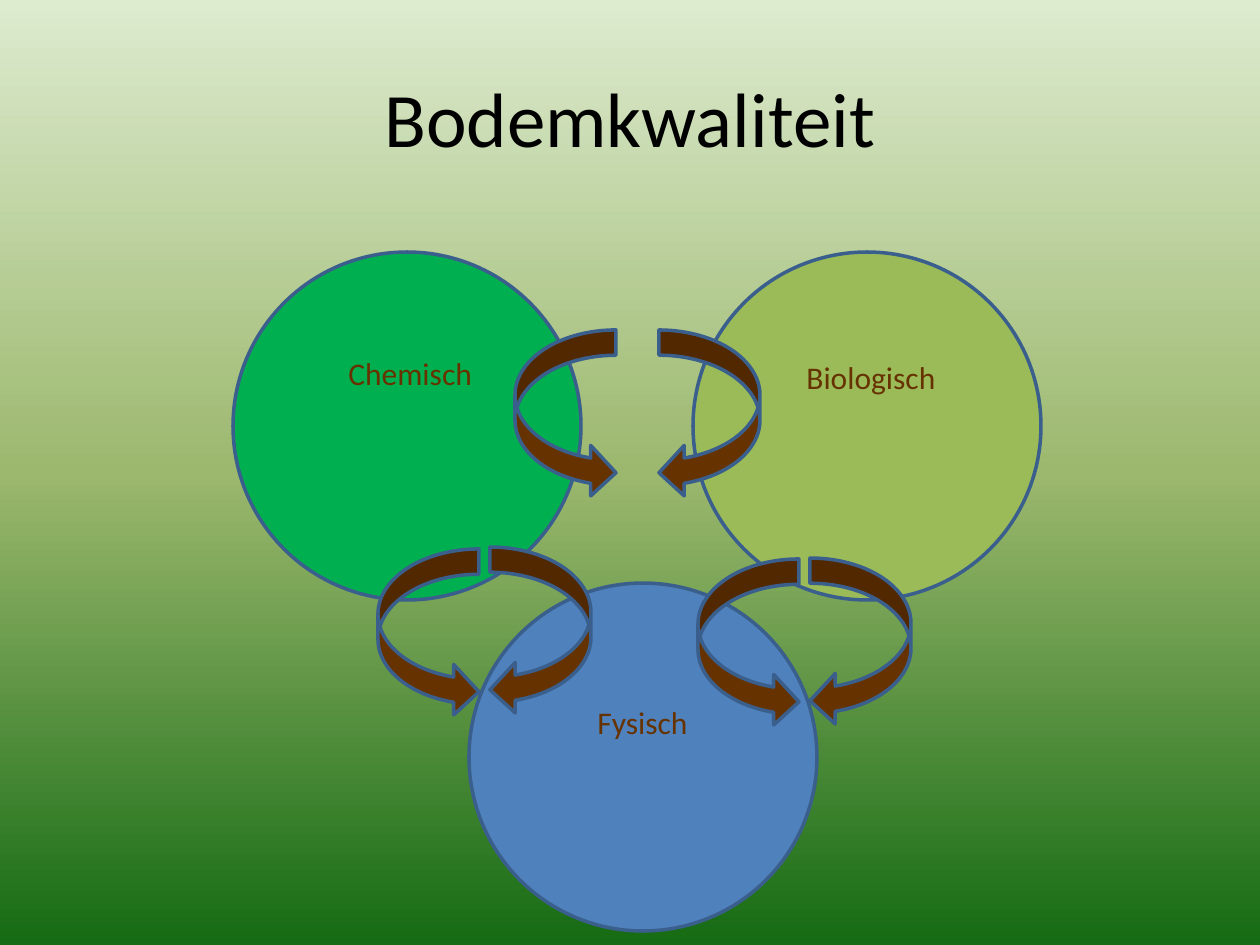
from copy import deepcopy
from typing import NamedTuple

from pptx import Presentation
from pptx.dml.color import RGBColor as Rgb
from pptx.enum.shapes import MSO_SHAPE as Kind
from pptx.enum.text import MSO_ANCHOR as Anchor, PP_ALIGN as Align
from pptx.oxml.ns import qn
from pptx.slide import Slide
from pptx.util import Emu, Pt

SCALE = 914400 / 126
DISC = 348
ARROW = (101, 168)
FONT = "Calibri"
COLORS = {
    "top": "DDEBCF",
    "middle": "9CB86E",
    "bottom": "156B13",
    "green": "00B050",
    "olive": "9BBB59",
    "blue": "4F81BD",
    "brown": "663300",
    "edge": "3A5F8C",
    "black": "000000",
}


class Disc(NamedTuple):
    left: int
    top: int
    color: str


class Arrow(NamedTuple):
    left: int
    top: int
    kind: Kind


class Label(NamedTuple):
    text: str
    left: int
    top: int
    width: int
    height: int


DISCS = [
    Disc(233, 252, "green"),
    Disc(693, 252, "olive"),
    Disc(469, 583, "blue"),
]
ARROWS = [
    Arrow(515, 330, Kind.CURVED_RIGHT_ARROW),
    Arrow(659, 330, Kind.CURVED_LEFT_ARROW),
    Arrow(378, 549, Kind.CURVED_RIGHT_ARROW),
    Arrow(490, 547, Kind.CURVED_LEFT_ARROW),
    Arrow(698, 559, Kind.CURVED_RIGHT_ARROW),
    Arrow(810, 558, Kind.CURVED_LEFT_ARROW),
]
LABELS = [
    Label("Chemisch", 336, 348, 348, 127),
    Label("Biologisch", 794, 352, 207, 50),
    Label("Fysisch", 585, 697, 348, 165),
]


def px(size: int) -> Emu:
    return Emu(round(size * SCALE))


def rgb(name: str) -> Rgb:
    return Rgb.from_string(COLORS[name])


def paint_back(slide: Slide) -> None:
    fill = slide.background.fill
    fill.gradient()
    fill.gradient_angle = 270
    stops = slide.element.find(f".//{qn('a:gsLst')}")
    stops.insert(1, deepcopy(stops[0]))
    shades = [(0, "top"), (0.5, "middle"), (1, "bottom")]
    for stop, (place, name) in zip(fill.gradient_stops, shades):
        stop.position = place
        stop.color.rgb = rgb(name)


def write(frame, text: str, size: int, color: str, align: Align) -> None:
    frame.text = text
    frame.word_wrap = True
    para = frame.paragraphs[0]
    para.alignment = align
    para.font.name = FONT
    para.font.size = Pt(size)
    para.font.color.rgb = rgb(color)


def add_title(slide: Slide) -> None:
    title = slide.shapes.title
    title.left, title.top = px(63), px(38)
    title.width, title.height = px(1134), px(158)
    title.text_frame.vertical_anchor = Anchor.MIDDLE
    write(title.text_frame, "Bodemkwaliteit", 44, "black", Align.CENTER)


def add_form(slide: Slide, kind: Kind, left: int, top: int,
             width: int, height: int, color: str) -> None:
    form = slide.shapes.add_shape(kind, px(left), px(top), px(width), px(height))
    form.shadow.inherit = False
    form.fill.solid()
    form.fill.fore_color.rgb = rgb(color)
    form.line.color.rgb = rgb("edge")
    form.line.width = Pt(2)


def add_label(slide: Slide, label: Label) -> None:
    box = slide.shapes.add_textbox(*map(px, label[1:]))
    write(box.text_frame, label.text, 18, "brown", Align.LEFT)


def main() -> None:
    deck = Presentation()
    deck.slide_width, deck.slide_height = px(1260), px(945)
    slide = deck.slides.add_slide(deck.slide_layouts[5])
    paint_back(slide)
    for disc in DISCS:
        add_form(slide, Kind.OVAL, disc.left, disc.top, DISC, DISC, disc.color)
    add_title(slide)
    for arrow in ARROWS:
        add_form(slide, arrow.kind, arrow.left, arrow.top, *ARROW, "brown")
    for label in LABELS:
        add_label(slide, label)
    deck.save("out.pptx")


if __name__ == "__main__":
    main()
